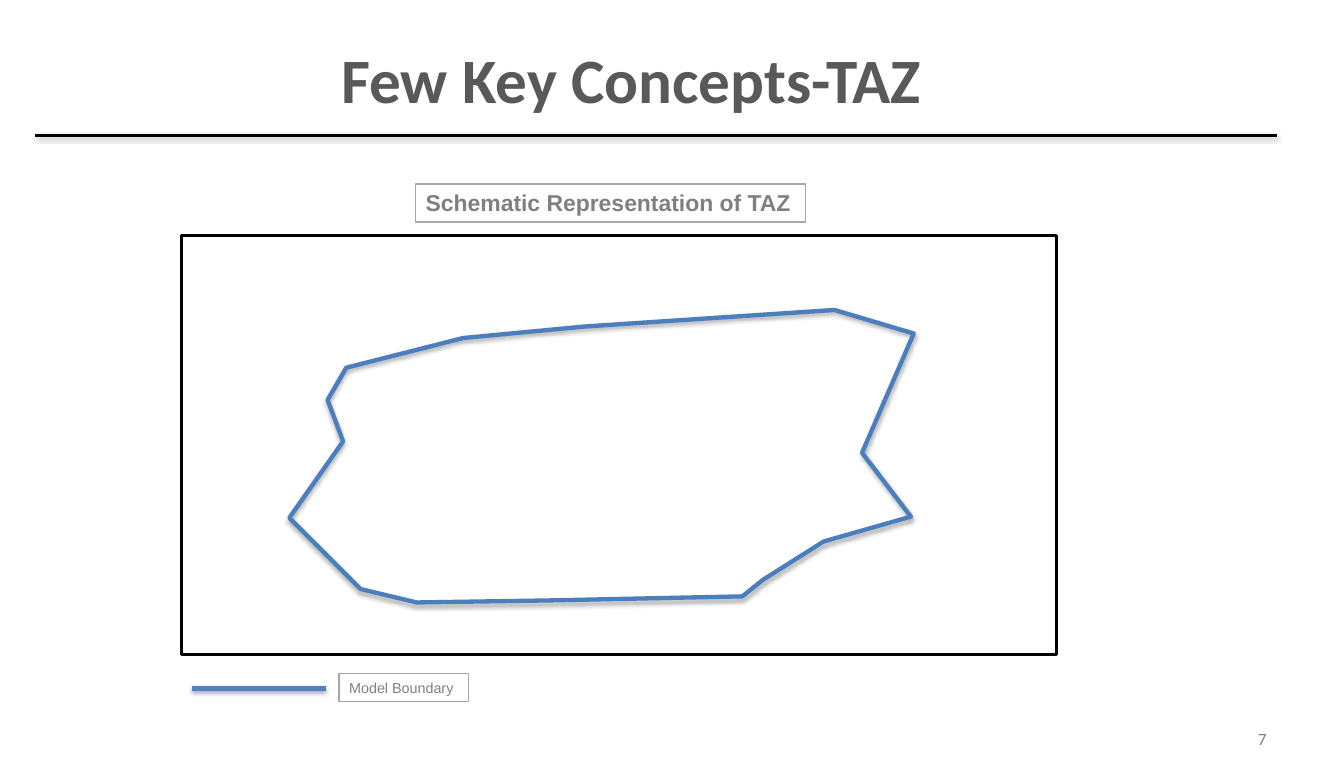
from dataclasses import dataclass

from lxml import etree
from pptx import Presentation
from pptx import util as u
from pptx.dml.color import RGBColor
from pptx.enum import shapes, text
from pptx.oxml import ns


@dataclass(frozen=True)
class Theme:
    ink: str = "000000"
    paper: str = "FFFFFF"
    title: str = "595959"
    grey: str = "808080"
    edge: str = "A6A6A6"
    bound: str = "4B7EBC"
    key: str = "4F81BD"
    head: str = "Calibri"
    body: str = "Arial"
    big: int = 44
    mid: int = 16
    small: int = 12
    tiny: int = 10


THEME = Theme()

# Corners of the model boundary, in cm
BOUNDARY = [
    (7.11, 12.73), (8.86, 14.48), (10.24, 14.81), (13.49, 14.76),
    (18.24, 14.66), (18.75, 14.25), (20.24, 13.31), (22.38, 12.7),
    (21.18, 11.13), (22.45, 8.2), (20.5, 7.62), (14.33, 8.03),
    (11.38, 8.31), (8.51, 9.04), (8.05, 9.83), (8.43, 10.85),
]


def stroke(shape, color, width):
    shape.line.color.rgb = RGBColor.from_string(color)
    shape.line.width = u.Pt(width)


def shade(shape, alpha, dist):
    """Give a stroked shape a soft shadow straight below it."""
    effect = etree.SubElement(shape._element.spPr, ns.qn("a:effectLst"))
    shadow = etree.SubElement(
        effect, ns.qn("a:outerShdw"), blurRad=str(u.Pt(3.1)),
        dist=str(u.Pt(dist)), dir="5400000", rotWithShape="0")
    color = etree.SubElement(shadow, ns.qn("a:srgbClr"), val=THEME.ink)
    etree.SubElement(color, ns.qn("a:alpha"), val=str(alpha * 1000))


def write(frame, words, font, size, color, align, bold=False):
    para = frame.paragraphs[0]
    para.text = words
    para.alignment = align
    para.font.name = font
    para.font.size = u.Pt(size)
    para.font.bold = bold
    para.font.color.rgb = RGBColor.from_string(color)


def add_text(slide, box, words, size, color, align, anchor, bold=False):
    frame = slide.shapes.add_textbox(*map(u.Cm, box)).text_frame
    frame.word_wrap = True
    frame.vertical_anchor = anchor
    write(frame, words, THEME.head, size, color, align, bold)


def add_rect(slide, box, color, width, fill=None):
    rect = slide.shapes.add_shape(
        shapes.MSO_SHAPE.RECTANGLE, *map(u.Cm, box))
    rect.shadow.inherit = False
    if fill:
        rect.fill.solid()
        rect.fill.fore_color.rgb = RGBColor.from_string(fill)
    else:
        rect.fill.background()
    stroke(rect, color, width)
    return rect


def add_label(slide, box, words, size, bold=False):
    frame = add_rect(slide, box, THEME.edge, 1).text_frame
    frame.word_wrap = False
    frame.auto_size = text.MSO_AUTO_SIZE.SHAPE_TO_FIT_TEXT
    frame.vertical_anchor = text.MSO_ANCHOR.TOP
    write(frame, words, THEME.body, size, THEME.grey,
          text.PP_ALIGN.LEFT, bold)


def add_rule(slide, left, right, y, color, width):
    rule = slide.shapes.add_connector(
        shapes.MSO_CONNECTOR.STRAIGHT,
        u.Cm(left), u.Cm(y), u.Cm(right), u.Cm(y))
    stroke(rule, color, width)
    shade(rule, 38, 1.6)


def add_zone(slide, points):
    first, *rest = [(u.Cm(x), u.Cm(y)) for x, y in points]
    pen = slide.shapes.build_freeform(*first)
    pen.add_line_segments(rest, close=True)
    zone = pen.convert_to_shape()
    zone.fill.background()
    stroke(zone, THEME.bound, 3)
    shade(zone, 35, 1.8)


def main():
    deck = Presentation()
    deck.slide_width, deck.slide_height = u.Cm(33.02), u.Cm(19.05)
    slide = deck.slides.add_slide(deck.slide_layouts[6])

    add_text(slide, (23.67, 17.65, 7.7, 1.02), "7", THEME.small, THEME.grey,
             text.PP_ALIGN.RIGHT, text.MSO_ANCHOR.MIDDLE)
    add_text(slide, (4.57, 0.86, 21.89, 2.95), "Few Key Concepts-TAZ",
             THEME.big, THEME.title, text.PP_ALIGN.CENTER,
             text.MSO_ANCHOR.TOP, bold=True)
    add_rule(slide, 0.86, 31.37, 3.33, THEME.ink, 2)

    add_rect(slide, (4.45, 5.79, 21.51, 10.29), THEME.ink, 2, THEME.paper)
    add_zone(slide, BOUNDARY)

    add_rule(slide, 4.72, 8, 16.92, THEME.key, 3)
    add_label(slide, (8.33, 16.56, 3.18, 0.69), "Model Boundary", THEME.tiny)
    add_label(slide, (10.21, 4.52, 9.58, 0.94),
              "Schematic Representation of TAZ", THEME.mid, bold=True)
    deck.save("out.pptx")


if __name__ == "__main__":
    main()
